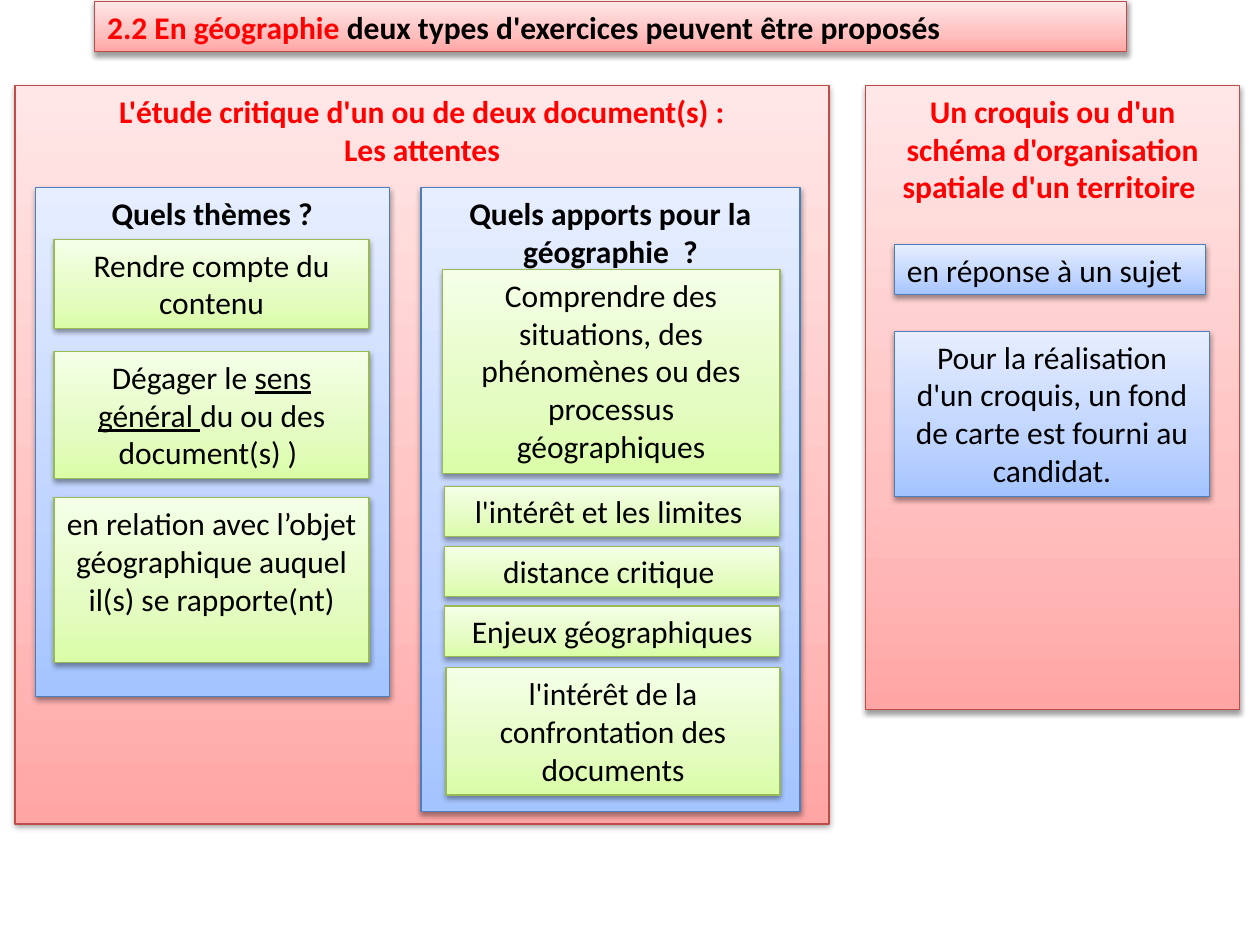
from dataclasses import dataclass

from lxml import etree
from pptx import Presentation
from pptx.dml.color import RGBColor
from pptx.enum.shapes import MSO_SHAPE
from pptx.enum.text import MSO_ANCHOR, MSO_AUTO_SIZE, PP_ALIGN
from pptx.oxml import parse_xml
from pptx.oxml.ns import nsdecls
from pptx.util import Inches, Pt

RECT = MSO_SHAPE.RECTANGLE
TOP = MSO_ANCHOR.TOP
FIXED = MSO_AUTO_SIZE.NONE
LEFT, CENTER = PP_ALIGN.LEFT, PP_ALIGN.CENTER
BLACK = RGBColor(0x00, 0x00, 0x00)
RED = RGBColor(0xFF, 0x00, 0x00)


@dataclass(frozen=True)
class Theme:
    low: RGBColor
    mid: RGBColor
    high: RGBColor
    edge: RGBColor


ROSE = Theme(RGBColor(0xFF, 0xA6, 0xA5), RGBColor(0xFF, 0xC0, 0xBF),
             RGBColor(0xFF, 0xE7, 0xE7), RGBColor(0xBF, 0x4C, 0x48))
BLUE = Theme(RGBColor(0xA4, 0xC4, 0xFF), RGBColor(0xBF, 0xD4, 0xFF),
             RGBColor(0xE6, 0xEE, 0xFF), RGBColor(0x4B, 0x7E, 0xBC))
GREEN = Theme(RGBColor(0xDA, 0xFD, 0xA7), RGBColor(0xE4, 0xFC, 0xC2),
              RGBColor(0xF5, 0xFF, 0xE7), RGBColor(0x98, 0xB9, 0x55))


@dataclass(frozen=True)
class Span:
    text: str
    color: RGBColor = BLACK
    under: bool = False


@dataclass(frozen=True)
class Box:
    left: float
    top: float
    width: float
    height: float
    theme: Theme
    text: str | tuple[Span, ...]
    color: RGBColor = BLACK
    bold: bool = False
    align: PP_ALIGN = CENTER


def shade(theme: Theme) -> etree._Element:
    """Gradient that lightens from bottom to top."""
    stops = "".join(
        f'<a:gs pos="{pos}"><a:srgbClr val="{color}"/></a:gs>'
        for pos, color in ((0, theme.low), (35000, theme.mid), (100000, theme.high)))
    return parse_xml(f'<a:gradFill {nsdecls("a")} rotWithShape="1"><a:gsLst>{stops}'
                     '</a:gsLst><a:lin ang="16200000" scaled="1"/></a:gradFill>')


def shadow() -> etree._Element:
    return parse_xml(
        f'<a:effectLst {nsdecls("a")}><a:outerShdw blurRad="{Pt(3.1)}" '
        f'dist="{Pt(1.6)}" dir="5400000" rotWithShape="0"><a:srgbClr val="000000">'
        '<a:alpha val="38000"/></a:srgbClr></a:outerShdw></a:effectLst>')


def write(shape, box: Box) -> None:
    frame = shape.text_frame
    frame.word_wrap = True
    frame.auto_size = FIXED
    frame.vertical_anchor = TOP
    para = frame.paragraphs[0]
    para.alignment = box.align
    para.font.name = "Calibri"
    para.font.size = Pt(18)
    para.font.bold = box.bold
    para.font.color.rgb = box.color
    if isinstance(box.text, str):
        para.text = box.text
        return
    for span in box.text:
        run = para.add_run()
        run.text = span.text
        run.font.color.rgb = span.color
        if span.under:
            run.font.underline = True


def dress(shape, box: Box) -> None:
    """Place, colour and fill in a shape."""
    shape.left, shape.top = Inches(box.left), Inches(box.top)
    shape.width, shape.height = Inches(box.width), Inches(box.height)
    props = shape.element.spPr
    props.append(shade(box.theme))
    shape.line.color.rgb = box.theme.edge
    shape.line.width = Pt(0.75)
    props.append(shadow())
    write(shape, box)


def card(left: float, top: float, width: float, height: float,
         text: str | tuple[Span, ...]) -> Box:
    return Box(left, top, width, height, GREEN, text)


TITLE = Box(0.75, 0.01, 8.19, 0.4, ROSE, (
    Span("2.2 En géographie ", RED),
    Span("deux types d'exercices peuvent être proposés")), bold=True, align=LEFT)

PANELS = (
    Box(6.87, 0.68, 2.97, 4.95, ROSE,
        "Un croquis ou d'un schéma d'organisation spatiale d'un territoire ", RED, True),
    Box(0.12, 0.68, 6.46, 5.86, ROSE,
        "L'étude critique d'un ou de deux document(s) :\nLes attentes", RED, True),
    Box(0.28, 1.49, 2.81, 4.04, BLUE, "Quels thèmes ?", bold=True),
    Box(3.34, 1.49, 3.01, 4.95, BLUE, "Quels apports pour la géographie  ?", bold=True),
)

THEMES = (
    card(0.43, 1.9, 2.5, 0.71, "Rendre compte du contenu"),
    card(0.43, 2.79, 2.5, 1.01, (
        Span("Dégager le "), Span("sens général ", under=True),
        Span("du ou des document(s) ) "))),
    card(0.43, 3.95, 2.5, 1.31,
         "en relation avec l’objet géographique auquel il(s) se rapporte(nt)"),
)

SHORT = ("l'intérêt et les limites ", "distance critique ", "Enjeux géographiques")
GAINS = (
    card(3.51, 2.14, 2.68, 1.62,
         "Comprendre des situations, des phénomènes ou des processus géographiques"),
    *(card(3.53, 3.86 + 0.475 * row, 2.66, 0.4, text)
      for row, text in enumerate(SHORT)),
    card(3.54, 5.3, 2.65, 1.01, "l'intérêt de la confrontation des documents"),
)

SKETCH = (
    Box(7.1, 1.94, 2.47, 0.4, BLUE, "en réponse à un sujet ", align=LEFT),
    Box(7.1, 2.63, 2.5, 1.31, BLUE,
        "Pour la réalisation d'un croquis, un fond de carte est fourni au candidat."),
)


def main() -> None:
    deck = Presentation()
    deck.slide_width, deck.slide_height = Inches(10), Inches(7.5)
    slide = deck.slides.add_slide(deck.slide_layouts[5])
    dress(slide.shapes.title, TITLE)
    for box in PANELS + THEMES + GAINS + SKETCH:
        shape = slide.shapes.add_shape(RECT, 0, 0, 0, 0)
        dress(shape, box)
    deck.save("out.pptx")


if __name__ == "__main__":
    main()
